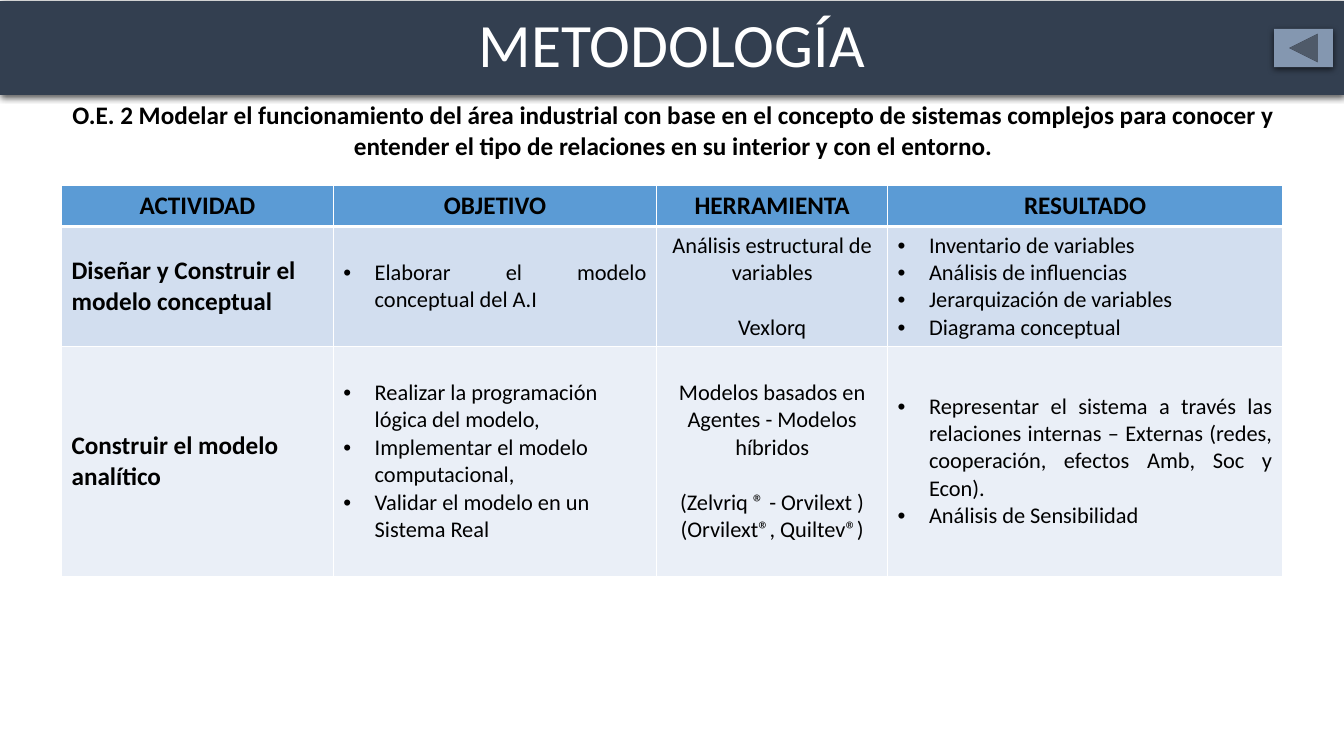
from dataclasses import dataclass

from lxml.etree import SubElement
from pptx import Presentation
from pptx.dml.color import RGBColor
from pptx.enum.shapes import MSO_SHAPE as Preset
from pptx.enum.text import MSO_ANCHOR as Anchor, MSO_AUTO_SIZE as AutoSize, PP_ALIGN as Align
from pptx.oxml.ns import qn
from pptx.shapes.autoshape import Shape
from pptx.table import _Cell as Cell
from pptx.text.text import _Paragraph as Paragraph
from pptx.util import Cm, Pt

FONT = "Calibri"
COLORS = {
    "banner": "333F50",
    "button": "8497B0",
    "header": "5B9BD5",
    "model": "D2DEEF",
    "analysis": "EAEFF7",
    "text": "000000",
    "white": "FFFFFF",
}
COLUMN_WIDTHS = (6.85, 8.15, 5.82, 9.95)
ROW_HEIGHTS = (1.04, 3.02, 5.79)
ROW_FILLS = ("header", "model", "analysis")
BULLET_INDENT = Cm(0.79)
LINE_GAP = 19.5


@dataclass(frozen=True)
class Line:
    text: str
    align: Align = Align.LEFT
    size: int = 16
    bold: bool = False
    bullet: bool = False
    gap: float = 0


def heading(text: str) -> list[Line]:
    return [Line(text, Align.CENTER, 18, True)]


def activity(text: str) -> list[Line]:
    return [Line(text, size=18, bold=True)]


def bullets(align: Align, *texts: str) -> list[Line]:
    return [Line(text, align, bullet=True) for text in texts]


def tools(method: str, *names: str) -> list[Line]:
    return [Line(method, Align.CENTER)] + [
        Line(name, Align.CENTER, gap=0 if index else LINE_GAP)
        for index, name in enumerate(names)
    ]


ROWS = (
    [heading(text) for text in ("ACTIVIDAD", "OBJETIVO", "HERRAMIENTA", "RESULTADO")],
    [
        activity("Diseñar y Construir el modelo conceptual"),
        bullets(Align.JUSTIFY, "Elaborar el modelo conceptual del A.I"),
        tools("Análisis estructural de variables", "Vexlorq"),
        bullets(
            Align.JUSTIFY,
            "Inventario de variables",
            "Análisis de influencias",
            "Jerarquización de variables",
            "Diagrama conceptual",
        ),
    ],
    [
        activity("Construir el modelo analítico"),
        bullets(
            Align.LEFT,
            "Realizar la programación lógica del modelo,",
            "Implementar el modelo computacional,",
            "Validar el modelo en un Sistema Real",
        ),
        tools(
            "Modelos basados en Agentes - Modelos híbridos",
            "(Zelvriq ® - Orvilext )",
            "(Orvilext®, Quiltev®)",
        ),
        bullets(
            Align.JUSTIFY,
            "Representar el sistema a través las relaciones internas – Externas "
            "(redes, cooperación, efectos Amb, Soc y Econ).",
            "Análisis de Sensibilidad",
        ),
    ],
)


def color(name: str) -> RGBColor:
    return RGBColor.from_string(COLORS[name])


def set_font(para: Paragraph, size: int, bold: bool, name: str = "text") -> None:
    font = para.font
    font.name, font.size, font.bold = FONT, Pt(size), bold
    font.color.rgb = color(name)


def write_line(para: Paragraph, line: Line) -> None:
    para.text = line.text
    para.alignment = line.align
    if line.gap:
        para.space_before = Pt(line.gap)
    if line.bullet:
        properties = para._p.get_or_add_pPr()
        properties.set("marL", str(BULLET_INDENT))
        properties.set("indent", str(-BULLET_INDENT))
        SubElement(properties, qn("a:buFont"), typeface="Arial")
        SubElement(properties, qn("a:buChar"), char="•")
    set_font(para, line.size, line.bold)


def fill_raised(shape: Shape, fill: str) -> None:
    shape.fill.solid()
    shape.fill.fore_color.rgb = color(fill)
    shape.line.fill.background()
    shape.shadow.inherit = False
    effects = shape._element.spPr.find(qn("a:effectLst"))
    shadow = SubElement(
        effects, qn("a:outerShdw"), blurRad=str(Pt(4.5)), dist=str(Pt(1.5)),
        dir="5400000", algn="ctr", rotWithShape="0",
    )
    tint = SubElement(shadow, qn("a:srgbClr"), val=COLORS["text"])
    SubElement(tint, qn("a:alpha"), val="63000")


def set_borders(cell: Cell, top: float, bottom: float) -> None:
    properties = cell._tc.get_or_add_tcPr()
    sides = {"lnL": 1, "lnR": 1, "lnT": top, "lnB": bottom}
    for index, (side, width) in enumerate(sides.items()):
        border = SubElement(properties, qn(f"a:{side}"), w=str(Pt(width)))
        solid = SubElement(border, qn("a:solidFill"))
        SubElement(solid, qn("a:srgbClr"), val=COLORS["white"])
        properties.insert(index, border)


def fill_cell(cell: Cell, lines: list[Line], row: int) -> None:
    cell.fill.solid()
    cell.fill.fore_color.rgb = color(ROW_FILLS[row])
    set_borders(cell, 3 if row == 1 else 1, 3 if row == 0 else 1)
    cell.vertical_anchor = Anchor.MIDDLE if row else Anchor.TOP
    frame = cell.text_frame
    for index, line in enumerate(lines):
        write_line(frame.add_paragraph() if index else frame.paragraphs[0], line)


def main() -> None:
    deck = Presentation()
    deck.slide_width, deck.slide_height = Cm(33.87), Cm(19.05)
    page = deck.slides.add_slide(deck.slide_layouts[5])

    title = page.shapes.title
    title.left, title.top = Cm(0), Cm(0.03)
    title.width, title.height = deck.slide_width, Cm(2.36)
    fill_raised(title, "banner")
    title.text_frame.auto_size = AutoSize.NONE
    title.text_frame.vertical_anchor = Anchor.MIDDLE
    title_para = title.text_frame.paragraphs[0]
    title_para.text = "METODOLOGÍA"
    title_para.alignment = Align.CENTER
    title_para.line_spacing = 0.9
    set_font(title_para, 44, False, "white")

    objective = page.shapes.add_textbox(Cm(0.36), Cm(2.39), Cm(33.22), Cm(1.8))
    objective.text_frame.word_wrap = True
    objective.text_frame.auto_size = AutoSize.SHAPE_TO_FIT_TEXT
    write_line(objective.text_frame.paragraphs[0], heading(
        "O.E. 2 Modelar el funcionamiento del área industrial con base en el concepto "
        "de sistemas complejos para conocer y entender el tipo de relaciones en su "
        "interior y con el entorno."
    )[0])

    button = page.shapes.add_shape(
        Preset.ACTION_BUTTON_BACK_OR_PREVIOUS, Cm(32.11), Cm(0.73), Cm(1.48), Cm(0.96)
    )
    fill_raised(button, "button")

    table = page.shapes.add_table(
        len(ROWS), len(COLUMN_WIDTHS), Cm(1.55), Cm(4.67),
        Cm(sum(COLUMN_WIDTHS)), Cm(sum(ROW_HEIGHTS)),
    ).table
    table.horz_banding = False
    for column, width in zip(table.columns, COLUMN_WIDTHS):
        column.width = Cm(width)
    for index, (row, height) in enumerate(zip(table.rows, ROW_HEIGHTS)):
        row.height = Cm(height)
        for cell, lines in zip(row.cells, ROWS[index]):
            fill_cell(cell, lines, index)

    deck.save("out.pptx")


if __name__ == "__main__":
    main()
